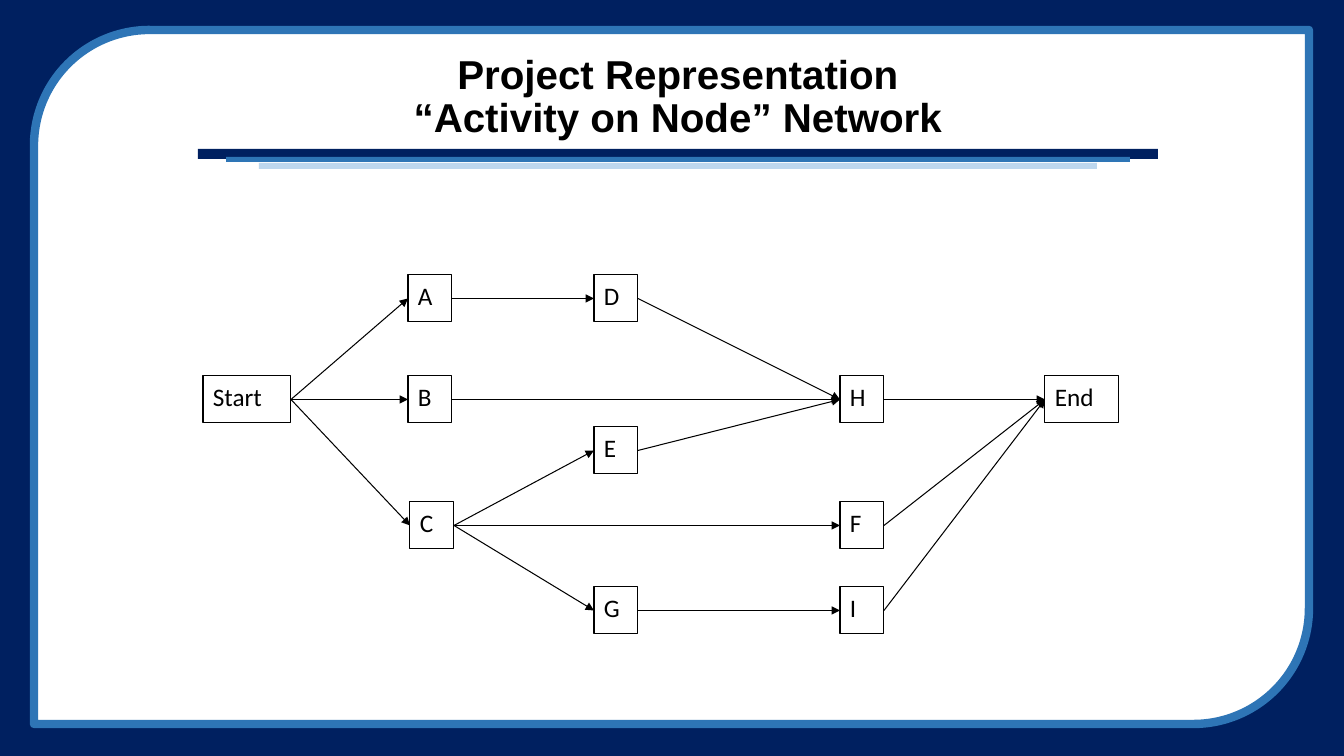
from dataclasses import dataclass

from lxml import etree
from pptx import Presentation
from pptx import util as u
from pptx.dml.color import RGBColor
from pptx.enum import shapes, text
from pptx.oxml.ns import qn

SCALE = 914400 / 100.8


@dataclass(frozen=True)
class Theme:
    navy: str = "002060"
    blue: str = "2E75B6"
    pale: str = "BDD7EE"
    paper: str = "FFFFFF"
    ink: str = "000000"
    title_font: str = "Arial"
    node_font: str = "Calibri"
    title_size: float = 28.8
    node_size: float = 18
    frame_line: float = 6
    thin_line: float = 0.75


THEME = Theme()

# Name: left, top, width, all within the network box
NODE_HEIGHT = 47
NODES = {
    "Start": (0, 101, 88),
    "A": (205, 0, 44),
    "B": (205, 101, 44),
    "C": (207, 227, 44),
    "D": (391, 0, 44),
    "E": (391, 152, 44),
    "G": (391, 312, 44),
    "H": (637, 101, 44),
    "F": (637, 227, 44),
    "I": (637, 312, 44),
    "End": (842, 101, 74),
}
SUCCESSORS = {
    "Start": "A B C",
    "A": "D",
    "B": "H",
    "C": "E F G",
    "D": "H",
    "E": "H",
    "G": "I",
    "H": "End",
    "F": "End",
    "I": "End",
}


def px(n):
    return u.Emu(round(n * SCALE))


def rgb(color):
    return RGBColor.from_string(color)


def add_block(slide, box, fill=None, line=None, width=0,
              kind=shapes.MSO_SHAPE.RECTANGLE):
    sp = slide.shapes.add_shape(kind, *map(px, box))
    sp.shadow.inherit = False
    if fill:
        sp.fill.solid()
        sp.fill.fore_color.rgb = rgb(fill)
    else:
        sp.fill.background()
    if line:
        sp.line.color.rgb = rgb(line)
        sp.line.width = u.Pt(width)
    else:
        sp.line.fill.background()
    return sp


def add_run(p, words, font, size, bold=False):
    r = p.add_run()
    r.text = words
    r.font.name = font
    r.font.size = u.Pt(size)
    r.font.bold = bold
    r.font.color.rgb = rgb(THEME.ink)


def add_frame(slide, box):
    x, y, w, h = box
    add_block(slide, box, THEME.navy)
    add_block(slide, (x + 34, y + 30, w - 69, h - 62), THEME.paper, THEME.blue,
              THEME.frame_line, shapes.MSO_SHAPE.ROUND_2_DIAG_RECTANGLE)


def add_title(slide, box, lines):
    title = slide.shapes.title
    title.left, title.top, title.width, title.height = map(px, box)
    slide.shapes._spTree.append(title._element)  # in front of the frame
    tf = title.text_frame
    tf.word_wrap = True
    tf.vertical_anchor = text.MSO_ANCHOR.MIDDLE
    p = tf.paragraphs[0]
    p.alignment = text.PP_ALIGN.CENTER
    p.line_spacing = 0.9
    for i, line in enumerate(lines):
        if i:
            p.add_line_break()
        add_run(p, line, THEME.title_font, THEME.title_size, bold=True)


def add_title_rules(slide, box):
    """Three stacked bars, each one shorter than the bar above it."""
    x, y, w, _ = box
    bars = ((0, 0, w, 10, THEME.navy),
            (28, 8, w - 56, 5, THEME.blue),
            (61, 14, w - 122, 6, THEME.pale))
    for dx, dy, width, height, color in bars:
        add_block(slide, (x + dx, y + dy, width, height), color)


def add_node(slide, box, name):
    sp = add_block(slide, box, line=THEME.ink, width=THEME.thin_line)
    tf = sp.text_frame
    tf.word_wrap = False
    tf.vertical_anchor = text.MSO_ANCHOR.TOP
    p = tf.paragraphs[0]
    p.alignment = text.PP_ALIGN.LEFT
    add_run(p, name, THEME.node_font, THEME.node_size)
    return sp


def add_arrow(slide, source, target):
    arrow = slide.shapes.add_connector(shapes.MSO_CONNECTOR.STRAIGHT, 0, 0, 0, 0)
    arrow.begin_connect(source, 3)
    arrow.end_connect(target, 1)
    arrow.line.color.rgb = rgb(THEME.ink)
    arrow.line.width = u.Pt(THEME.thin_line)
    etree.SubElement(arrow.line._get_or_add_ln(), qn("a:tailEnd"), type="triangle")
    etree.SubElement(arrow._element.spPr, qn("a:effectLst"))


def add_network(slide, box):
    x, y = box[:2]
    nodes = {name: add_node(slide, (x + left, y + top, width, NODE_HEIGHT), name)
             for name, (left, top, width) in NODES.items()}
    for source, targets in SUCCESSORS.items():
        for target in targets.split():
            add_arrow(slide, nodes[source], nodes[target])


def main():
    prs = Presentation()
    prs.slide_width, prs.slide_height = px(1344), px(756)
    slide = prs.slides.add_slide(prs.slide_layouts[5])
    add_frame(slide, (0, 0, 1344, 756))
    add_title_rules(slide, (198, 149, 960, 20))
    add_title(slide, (198, 49, 960, 98),
              ("Project Representation", "“Activity on Node” Network"))
    add_network(slide, (203, 275, 916, 359))
    prs.save("out.pptx")


if __name__ == "__main__":
    main()
